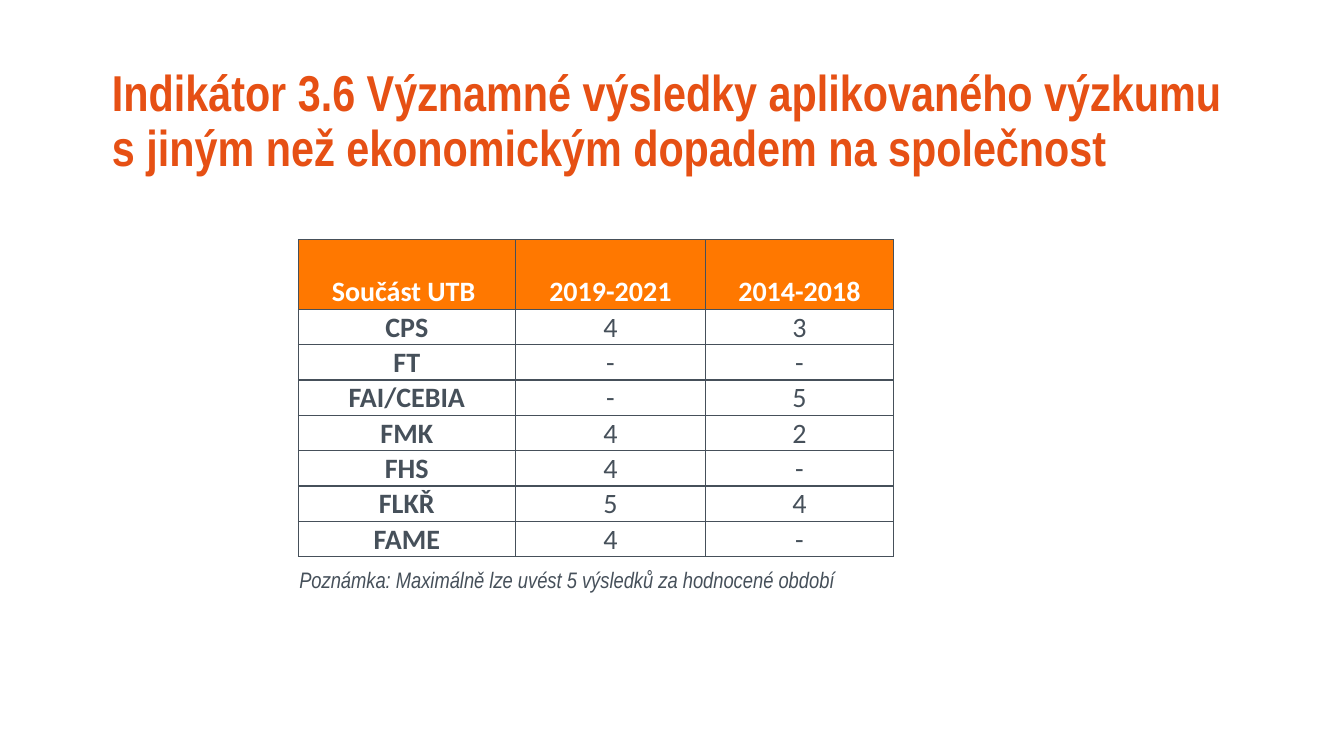
import pptx
import pptx.dml.color
import pptx.enum.text
import pptx.oxml
import pptx.oxml.ns
import pptx.util
from pptx.util import Inches

# Content
TITLE = ("Indikátor 3.6 Významné výsledky aplikovaného výzkumu "
         "s jiným než ekonomickým dopadem na společnost")
ROWS = [
    ("Součást UTB ", "2019-2021", "2014-2018"),
    ("CPS", "4", "3"),
    ("FT", "-", "-"),
    ("FAI/CEBIA", "-", "5"),
    ("FMK", "4", "2"),
    ("FHS", "4", "-"),
    ("FLKŘ", "5", "4"),
    ("FAME", "4", "-"),
]
NOTE = "Poznámka: Maximálně lze uvést 5 výsledků za hodnocené období"

# Theme and layout
THEME = {
    "title": {"name": "Arial Narrow", "size": 36, "bold": True, "color": "E65014"},
    "header": {"name": "Calibri", "size": 20, "bold": True, "color": "FFFFFF"},
    "label": {"name": "Calibri", "size": 20, "bold": True, "color": "46505A"},
    "value": {"name": "Calibri", "size": 20, "bold": False, "color": "46505A"},
    "note": {"name": "Arial Narrow", "size": 16, "italic": True, "color": "46505A"},
    "header_fill": "FF7800",
    "border": "46505A",
}
COL_WIDTHS = (2.15, 1.89, 1.86)
HEADER_HEIGHT, ROW_HEIGHT = 0.69, 0.35
ALIGN = pptx.enum.text.PP_ALIGN
ANCHOR = pptx.enum.text.MSO_ANCHOR


def rgb(value):
    return pptx.dml.color.RGBColor.from_string(value)


def set_attrs(obj, values):
    for name, value in values.items():
        setattr(obj, name, value)


def write(tf, text, style, align):
    p = tf.paragraphs[0]
    p.alignment = align
    r = p.add_run()
    r.text = text
    for name, value in THEME[style].items():
        if name == "color":
            r.font.color.rgb = rgb(value)
        else:
            setattr(r.font, name, pptx.util.Pt(value) if name == "size" else value)
    return p


def place(sp, left, top, width, height):
    set_attrs(sp, {"left": Inches(left), "top": Inches(top),
                   "width": Inches(width), "height": Inches(height)})


def add_borders(cell):
    tc_pr = cell._tc.get_or_add_tcPr()
    for i, side in enumerate("LRTB"):
        tc_pr.insert(i, pptx.oxml.parse_xml(
            f'<a:ln{side} {pptx.oxml.ns.nsdecls("a")} w="{pptx.util.Pt(1)}">'
            f'<a:solidFill><a:srgbClr val="{THEME["border"]}"/></a:solidFill>'
            f'</a:ln{side}>'))


def add_results_table(slide):
    height = HEADER_HEIGHT + ROW_HEIGHT * (len(ROWS) - 1)
    table = slide.shapes.add_table(
        len(ROWS), len(COL_WIDTHS), Inches(2.96), Inches(2.38),
        Inches(sum(COL_WIDTHS)), Inches(height)).table
    set_attrs(table, {"first_row": False, "horz_banding": False})
    for column, width in zip(table.columns, COL_WIDTHS):
        column.width = Inches(width)
    for i, row in enumerate(ROWS):
        table.rows[i].height = Inches(ROW_HEIGHT if i else HEADER_HEIGHT)
        for j, text in enumerate(row):
            cell = table.cell(i, j)
            set_attrs(cell, {
                "vertical_anchor": ANCHOR.BOTTOM, "margin_left": Inches(0.01),
                "margin_right": Inches(0.01), "margin_top": Inches(0.01),
                "margin_bottom": 0})
            if i == 0:
                cell.fill.solid()
                cell.fill.fore_color.rgb = rgb(THEME["header_fill"])
                style = "header"
            else:
                cell.fill.background()
                style = "value" if j else "label"
            write(cell.text_frame, text, style, ALIGN.CENTER)
            add_borders(cell)


def main():
    prs = pptx.Presentation()
    set_attrs(prs, {"slide_width": Inches(13.33), "slide_height": Inches(7.5)})
    slide = prs.slides.add_slide(prs.slide_layouts[5])

    # Title
    title = slide.shapes.title
    place(title, 1.01, 0.49, 11.31, 1.45)
    set_attrs(title.text_frame, {
        "word_wrap": True, "vertical_anchor": ANCHOR.MIDDLE,
        "auto_size": pptx.enum.text.MSO_AUTO_SIZE.NONE})
    write(title.text_frame, TITLE, "title", ALIGN.LEFT).line_spacing = 0.9

    # Table
    add_results_table(slide)

    # Note under the table
    note = slide.shapes.add_textbox(
        Inches(2.87), Inches(5.57), Inches(7.6), Inches(0.37))
    note.text_frame.word_wrap = True
    write(note.text_frame, NOTE, "note", ALIGN.LEFT)

    prs.save("out.pptx")


if __name__ == "__main__":
    main()
